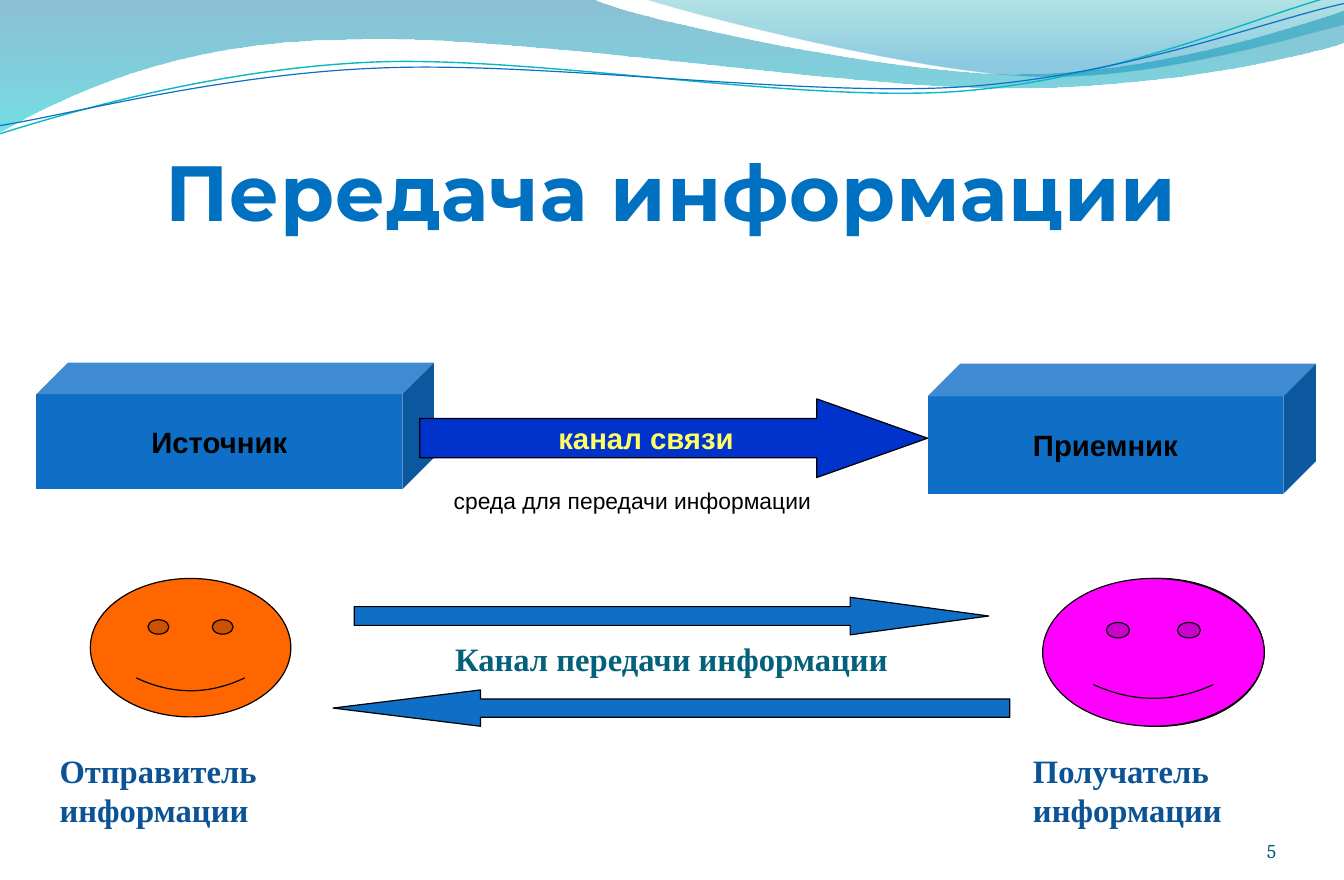
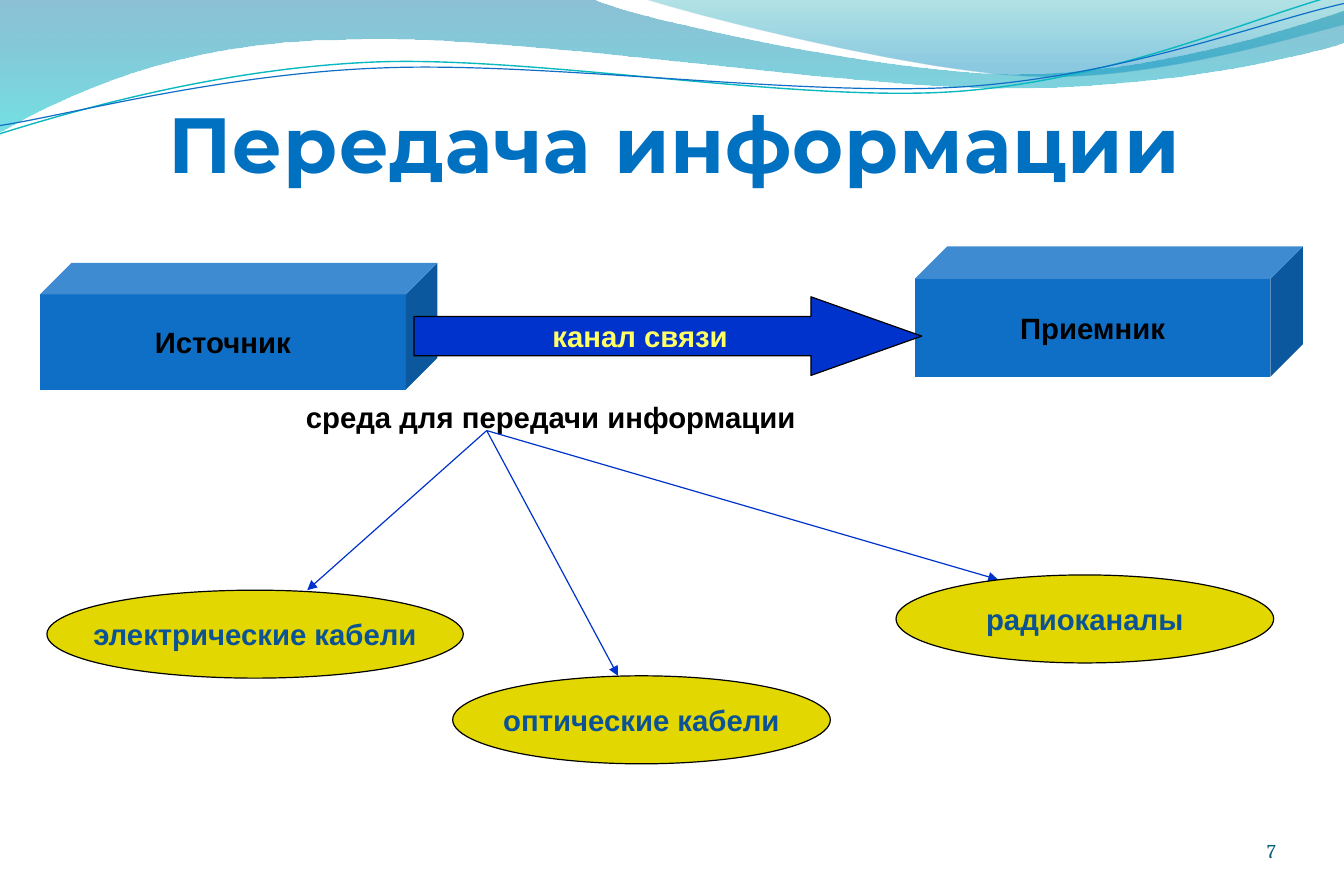
import math

import lxml.etree
import pptx
import pptx.dml.color
import pptx.enum.shapes
import pptx.enum.text
import pptx.oxml.ns
import pptx.util

Inches = pptx.util.Inches
RGBColor = pptx.dml.color.RGBColor
SHAPE = pptx.enum.shapes.MSO_SHAPE
ALIGN = pptx.enum.text.PP_ALIGN
ANCHOR = pptx.enum.text.MSO_ANCHOR
qn = pptx.oxml.ns.qn

# Colours
BLACK = RGBColor(0x00, 0x00, 0x00)
BLUE = RGBColor(0x0F, 0x6F, 0xC6)
TITLE_BLUE = RGBColor(0x00, 0x70, 0xC0)
DEEP_BLUE = RGBColor(0x00, 0x33, 0xCC)
LABEL_BLUE = RGBColor(0x0B, 0x53, 0x94)
TEAL = RGBColor(0x04, 0x61, 0x7B)
NUMBER_TEAL = RGBColor(0x04, 0x5D, 0x75)
TURQUOISE = RGBColor(0x0A, 0xB8, 0xBF)
PALE_YELLOW = RGBColor(0xFF, 0xFF, 0x66)
MUSTARD = RGBColor(0xE2, 0xD7, 0x00)
ORANGE = RGBColor(0xFF, 0x66, 0x00)
PLUM = RGBColor(0x99, 0x33, 0x66)
MAGENTA = RGBColor(0xFF, 0x00, 0xFF)

# Wave bands: outline, then gradient stops as (position, colour, opacity %).
# A pair of numbers is a straight step, six numbers are a Bezier curve.
BANDS = [
    ([(0, -0.01), (5.04, -0.01),
      (5.45, 0.17, 7.6, 0.63, 8.69, 0.63), (9.78, 0.63, 10.98, 0.26, 11.46, 0.09),
      (11.47, 0.36),
      (11.27, 0.44, 9.97, 0.76, 8.55, 0.75), (7.13, 0.75, 4.37, 0.28, 2.95, 0.34),
      (1.48, 0.35, 0.53, 0.83, -0.01, 1.13), (0, -0.01)],
     [(0, RGBColor(0x00, 0x74, 0xA1), 45), (1, RGBColor(0x00, 0xC6, 0xCF), 55)]),
    ([(5.49, -0.01),
      (5.84, 0.11, 7.81, 0.62, 8.81, 0.65), (9.8, 0.69, 11.02, 0.32, 11.46, 0.21),
      (11.46, 0), (5.49, -0.01)],
     [(0, RGBColor(0x00, 0xA1, 0xA9), 30), (0.8, RGBColor(0x00, 0x8B, 0xBF), 45)]),
]
# Wave lines: outline as seen after the tilt, centre of the tilt, colour, points
WAVE_LINES = [
    ([(0, 1.14), (0.55, 0.97, 1.81, 0.59, 3.17, 0.53),
      (4.53, 0.47, 6.79, 0.88, 8.16, 0.78), (9.54, 0.68, 10.75, 0.12, 11.43, -0.05)],
     (5.72, 0.58), TURQUOISE, 0.85),
    ([(0, 1.07), (0.54, 0.99, 1.88, 0.63, 3.24, 0.58),
      (4.61, 0.52, 6.84, 0.83, 8.21, 0.74), (9.58, 0.65, 10.78, 0.18, 11.46, 0.03)],
     (5.73, 0.59), BLUE, 0.75),
]
TILT = -2.7


def turn(step, centre, degrees):
    """Turn every point of one outline step clockwise about the centre."""
    cos, sin = math.cos(math.radians(degrees)), math.sin(math.radians(degrees))
    turned = []
    for x, y in zip(step[::2], step[1::2]):
        dx, dy = x - centre[0], y - centre[1]
        turned += [centre[0] + dx * cos - dy * sin, centre[1] + dx * sin + dy * cos]
    return turned


def write_text(frame, text, *, size=18, font="Arial", color=BLACK, bold=True,
               align=ALIGN.CENTER, anchor=ANCHOR.MIDDLE, wrap=True, spacing=None):
    frame.word_wrap = wrap
    frame.vertical_anchor = anchor
    para = frame.paragraphs[0]
    para.alignment = align
    span = para.add_run()
    span.text = text
    span.font.size = pptx.util.Pt(size)
    span.font.name = font
    span.font.bold = bold
    span.font.color.rgb = color
    if spacing is not None:
        span._r.get_or_add_rPr().set("spc", str(round(spacing * 100)))


class Pages:
    """Holds the deck, its style and the page being drawn."""

    def __init__(self):
        self.deck = pptx.Presentation()
        self.deck.slide_width = Inches(11.46)
        self.deck.slide_height = Inches(7.5)
        self.page = None

    def start(self, title, title_at, number):
        self.page = self.deck.slides.add_slide(self.deck.slide_layouts[6])
        for outline, stops in BANDS:
            self.band(outline, stops)
        for outline, centre, color, width in WAVE_LINES:
            self.wave_line(outline, centre, color, width)
        self.text((*title_at, 10.31, 1.25), title, insets=(0, 0.05, 0, 0), size=48,
                  font="Montserrat", color=TITLE_BLUE, anchor=ANCHOR.BOTTOM, spacing=0.5)
        self.text((9.93, 6.95, 0.95, 0.4), number, insets=(0, 0, 0, 0), size=12,
                  font="Cambria", color=NUMBER_TEAL, bold=False, align=ALIGN.RIGHT,
                  anchor=ANCHOR.BOTTOM)

    def freeform(self, outline, closed):
        """Lay out all points as straight steps, then join triples into curves."""
        points = [(Inches(x), Inches(y)) for step in outline
                  for x, y in zip(step[::2], step[1::2])]
        builder = self.page.shapes.build_freeform(*points[0])
        builder.add_line_segments(points[1:], close=closed)
        shape = builder.convert_to_shape()
        shape.shadow.inherit = False
        segments = iter(list(shape._element.spPr.iter(qn("a:lnTo"))))
        for step in outline[1:]:
            segment = next(segments)
            if len(step) == 6:
                curve = lxml.etree.Element(qn("a:cubicBezTo"))
                segment.addprevious(curve)
                for part in (segment, next(segments), next(segments)):
                    curve.append(part[0])
                    part.getparent().remove(part)
        return shape

    def band(self, outline, stops):
        shape = self.freeform(outline, True)
        shape.line.fill.background()
        shape.fill.gradient()
        shape.fill.gradient_angle = 270
        for stop, (position, color, _) in zip(shape.fill.gradient_stops, stops):
            stop.position = position
            stop.color.rgb = color
        colors = shape._element.spPr.iter(qn("a:srgbClr"))
        for element, (_, _, opacity) in zip(colors, stops):
            lxml.etree.SubElement(element, qn("a:alpha"), val=str(opacity * 1000))

    def wave_line(self, outline, centre, color, width):
        shape = self.freeform([turn(step, centre, -TILT) for step in outline], False)
        shape.rotation = TILT
        shape.fill.background()
        shape.line.color.rgb = color
        shape.line.width = pptx.util.Pt(width)

    def text(self, at, text, insets=(0.1, 0.05, 0.1, 0.05), **style):
        box = self.page.shapes.add_textbox(*map(Inches, at))
        frame = box.text_frame
        (frame.margin_left, frame.margin_top,
         frame.margin_right, frame.margin_bottom) = map(Inches, insets)
        write_text(frame, text, **style)

    def shape(self, kind, at, fill, text=None, adjust=(), outlined=True, **style):
        shape = self.page.shapes.add_shape(kind, *map(Inches, at))
        shape.shadow.inherit = False
        for index, value in enumerate(adjust):
            shape.adjustments[index] = value
        shape.fill.solid()
        shape.fill.fore_color.rgb = fill
        if outlined:
            shape.line.color.rgb = BLACK
            shape.line.width = pptx.util.Pt(0.75)
        else:
            shape.line.fill.background()
        if text:
            write_text(shape.text_frame, text, wrap=False, **style)

    def arrow_line(self, start, end):
        line = self.page.shapes.add_connector(
            pptx.enum.shapes.MSO_CONNECTOR.STRAIGHT, *map(Inches, (*start, *end)))
        line.line.color.rgb = DEEP_BLUE
        line.line.width = pptx.util.Pt(0.75)
        lxml.etree.SubElement(line.line._get_or_add_ln(), qn("a:tailEnd"), type="triangle")
        lxml.etree.SubElement(line._element.spPr, qn("a:effectLst"))

    def channel(self, source_at, receiver_at, arrow_at):
        """Source block, receiver block and the channel arrow between them."""
        for at, size, name in ((source_at, (3.39, 1.08), "Источник"),
                               (receiver_at, (3.31, 1.11), "Приемник")):
            self.shape(SHAPE.CUBE, (*at, *size), BLUE, name, adjust=[0.25], outlined=False)
        self.shape(SHAPE.RIGHT_ARROW, (*arrow_at, 4.33, 0.67), DEEP_BLUE, "канал связи",
                   adjust=[0.5, 1.41], color=PALE_YELLOW)


def main():
    pages = Pages()
    title = "Передача информации"
    medium = "среда для передачи информации"

    # Sender and recipient
    pages.start(title, (0.57, 0.77), "5")
    pages.channel((0.31, 3.09), (7.91, 3.1), (3.58, 3.4))
    pages.text((3.77, 4.1, 3.93, 0.33), medium, size=14, bold=False,
               align=ALIGN.LEFT, anchor=ANCHOR.TOP)
    for left, width, height, fill, smile in ((0.77, 1.71, 1.18, ORANGE, ()),
                                             (8.98, 1.8, 1.26, PLUM, (-0.05,))):
        pages.shape(SHAPE.SMILEY_FACE, (left, 4.93, width, height), fill, adjust=smile)
    pages.shape(SHAPE.LEFT_ARROW, (2.84, 5.88, 5.77, 0.31), BLUE, adjust=[0.5, 4.06])
    for at, label, color, align in (
            ((8.71, 6.35, 2.16, 0.77), "Получатель информации", LABEL_BLUE, ALIGN.LEFT),
            ((0.41, 6.35, 2.16, 0.77), "Отправитель информации", LABEL_BLUE, ALIGN.LEFT),
            ((2.93, 5.4, 5.59, 0.43), "Канал передачи информации", TEAL, ALIGN.CENTER)):
        pages.text(at, label, size=20, font="Times New Roman", color=color,
                   align=align, anchor=ANCHOR.TOP)
    pages.shape(SHAPE.RIGHT_ARROW, (3.02, 5.09, 5.41, 0.32), BLUE, adjust=[0.5, 3.69])
    pages.shape(SHAPE.SMILEY_FACE, (8.89, 4.93, 1.89, 1.26), MAGENTA)

    # Kinds of channel
    pages.start(title, (0.6, 0.36), "7")
    pages.channel((0.34, 2.24), (7.8, 2.1), (3.53, 2.53))
    pages.text((2.51, 3.35, 6.49, 0.4), medium, align=ALIGN.LEFT, anchor=ANCHOR.TOP)
    kinds = [((2.62, 5.03), (0.4, 5.03, 3.55, 0.75), "электрические кабели"),
             ((5.27, 5.76), (3.86, 5.76, 3.22, 0.75), "оптические кабели"),
             ((8.51, 4.94), (7.64, 4.9, 3.22, 0.75), "радиоканалы")]
    for tip, _, _ in kinds:
        pages.arrow_line((4.15, 3.67), tip)
    for _, at, name in kinds:
        pages.shape(SHAPE.OVAL, at, MUSTARD, name, color=LABEL_BLUE)

    pages.deck.save("out.pptx")


if __name__ == "__main__":
    main()
